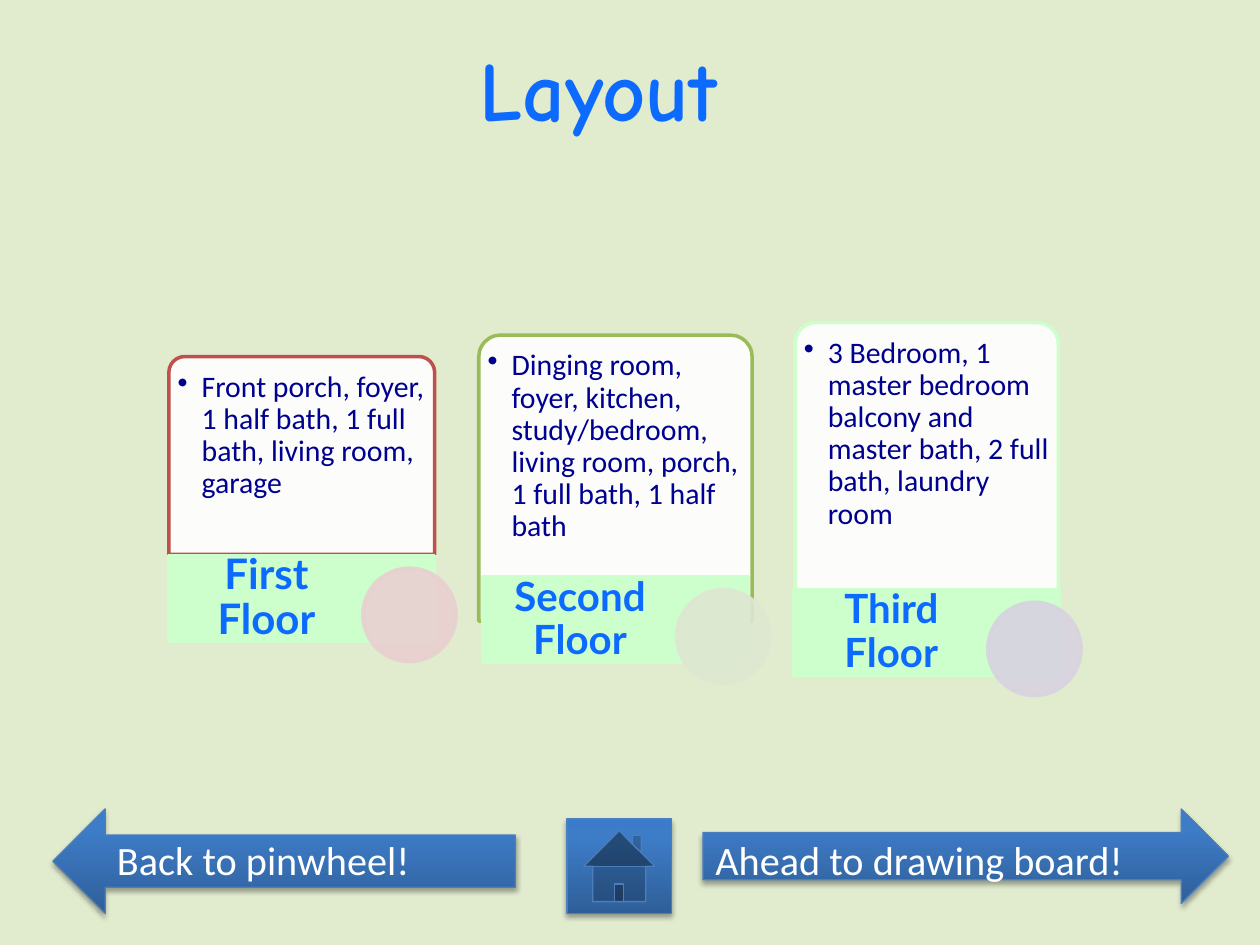
from copy import deepcopy

from pptx import Presentation
from pptx.dml.color import RGBColor
from pptx.enum import shapes, text
from pptx.oxml import ns
from pptx.oxml.xmlchemy import OxmlElement
from pptx.util import Inches, Pt

BACKGROUND = RGBColor(0xE1, 0xEB, 0xCE)
BRIGHT_BLUE = RGBColor(0x0C, 0x6A, 0xFF)
NAVY = RGBColor(0x00, 0x00, 0x90)
WHITE = RGBColor(0xFF, 0xFF, 0xFF)
BLACK = RGBColor(0x00, 0x00, 0x00)
MINT = RGBColor(0xCC, 0xFF, 0xCC)
RED = RGBColor(0xC0, 0x50, 0x4D)
GREEN = RGBColor(0x9B, 0xBB, 0x59)
PALE_RED = RGBColor(0xE8, 0xD0, 0xD0)
PALE_GREEN = RGBColor(0xDE, 0xE7, 0xD1)
PALE_PURPLE = RGBColor(0xD8, 0xD3, 0xE0)
BUTTON_LINE = RGBColor(0x4B, 0x7E, 0xBC)
BUTTON_STOPS = [
    (0, RGBColor(0x2F, 0x5F, 0x99)),
    (0.8, RGBColor(0x3D, 0x7C, 0xC7)),
    (1, RGBColor(0x3A, 0x7C, 0xCB)),
]

FLOORS = [
    ("First Floor", 24, "Front porch, foyer, 1 half bath, 1 full bath, living room, garage",
     (1.34, 2.83, 2.11, 1.57), (1.34, 4.41), RED, PALE_RED),
    ("Second Floor", 23,
     "Dinging room, foyer, kitchen, study/bedroom, living room, porch, 1 full bath, 1 half bath",
     (3.8, 2.66, 2.17, 2.27), (3.83, 4.58), GREEN, PALE_GREEN),
    ("Third Floor", 23,
     "3 Bedroom, 1 master bedroom balcony and master bath, 2 full bath, laundry room",
     (6.31, 2.56, 2.09, 2.65), (6.3, 4.68), MINT, PALE_PURPLE),
]


def add_child(parent, tag, **attributes):
    """Append an XML element with the given attributes."""
    child = OxmlElement(tag)
    for name, value in attributes.items():
        child.set(name, str(value))
    parent.append(child)
    return child


def set_alpha(fill, percent):
    """Make a solid fill partly transparent."""
    color = fill._xPr.find(ns.qn("a:solidFill"))[0]
    add_child(color, "a:alpha", val=percent * 1000)


def add_shape(slide, kind, box, line_color, line_width):
    """Add an outlined preset shape without a shadow."""
    shape = slide.shapes.add_shape(kind, *map(Inches, box))
    shape.shadow.inherit = False
    shape.line.color.rgb = line_color
    shape.line.width = Pt(line_width)
    return shape


def add_panel(slide, kind, box, fill_color, line_color, alpha=100):
    """Add a solid shape of a floor card."""
    shape = add_shape(slide, kind, box, line_color, 2)
    shape.fill.solid()
    shape.fill.fore_color.rgb = fill_color
    if alpha < 100:
        set_alpha(shape.fill, alpha)
    return shape


def add_text(slide, box, words, font, size, color, bold=False, align=text.PP_ALIGN.LEFT,
             margins=(0.1, 0.05, 0.1, 0.05)):
    """Add a wrapped one-paragraph text box."""
    frame = slide.shapes.add_textbox(*map(Inches, box)).text_frame
    frame.word_wrap = True
    (frame.margin_left, frame.margin_top,
     frame.margin_right, frame.margin_bottom) = map(Inches, margins)
    paragraph = frame.paragraphs[0]
    paragraph.text = words
    paragraph.alignment = align
    paragraph.font.name = font
    paragraph.font.size = Pt(size)
    paragraph.font.bold = bold
    paragraph.font.color.rgb = color
    return frame


def add_bullet(paragraph):
    """Give a paragraph a hanging round bullet."""
    properties = paragraph._p.get_or_add_pPr()
    properties.set("marL", str(Inches(0.19)))
    properties.set("indent", str(-Inches(0.19)))
    add_child(properties, "a:buChar", char="•")


def add_floor(slide, name, name_size, rooms, card, label, outline, accent):
    """Add a floor card with its rooms, name label and circle."""
    left, top, width, height = card
    panel = add_panel(slide, shapes.MSO_SHAPE.ROUND_2_SAME_RECTANGLE, card, WHITE, outline, 90)
    panel.adjustments[0] = 0.08
    frame = add_text(slide, (left + 0.05, top + 0.05, width - 0.1, height - 0.05), rooms,
                     "Calibri", 17, NAVY, margins=(0.02, 0.07, 0.02, 0.02))
    frame.paragraphs[0].line_spacing = 0.9
    add_bullet(frame.paragraphs[0])

    left, top = label
    add_panel(slide, shapes.MSO_SHAPE.RECTANGLE, (left, top, 2.11, 0.68), MINT, MINT)
    frame = add_text(slide, (left, top, 1.48, 0.68), name, "Lato", name_size, BRIGHT_BLUE,
                     True, text.PP_ALIGN.CENTER, (0.1, 0, 0.03, 0))
    frame.vertical_anchor = text.MSO_ANCHOR.MIDDLE
    frame.paragraphs[0].line_spacing = 0.9
    circle = add_panel(slide, shapes.MSO_SHAPE.OVAL, (left + 1.54, top + 0.1, 0.74, 0.74),
                       accent, accent, 90)
    set_alpha(circle.line.fill, 90)


def add_button(slide, kind, box):
    """Add a blue gradient button with a soft shadow."""
    button = add_shape(slide, kind, box, BUTTON_LINE, 0.75)
    button.fill.gradient()
    button.fill.gradient_angle = 90
    properties = button._element.spPr
    stop_list = properties.find(ns.qn("a:gradFill")).find(ns.qn("a:gsLst"))
    stop_list.append(deepcopy(stop_list[-1]))
    for stop, (position, color) in zip(button.fill.gradient_stops, BUTTON_STOPS):
        stop.position = position
        stop.color.rgb = color
    shadow = add_child(properties.find(ns.qn("a:effectLst")), "a:outerShdw", blurRad=Pt(3.1),
                       dist=Pt(1.8), dir=5400000, rotWithShape=0)
    color = add_child(shadow, "a:srgbClr", val=BLACK)
    add_child(color, "a:alpha", val=35000)


def main():
    """Build the floor layout slide."""
    presentation = Presentation()
    presentation.slide_width, presentation.slide_height = Inches(10), Inches(7.5)
    slide = presentation.slides.add_slide(presentation.slide_layouts[6])
    slide.background.fill.solid()
    slide.background.fill.fore_color.rgb = BACKGROUND

    title = add_text(slide, (2.75, 0.25, 4, 0.91), "Layout", "Comic Neue", 48, BRIGHT_BLUE,
                     True, text.PP_ALIGN.CENTER)
    title.auto_size = text.MSO_AUTO_SIZE.SHAPE_TO_FIT_TEXT
    for floor in FLOORS:
        add_floor(slide, *floor)

    add_button(slide, shapes.MSO_SHAPE.ACTION_BUTTON_HOME, (4.5, 6.5, 0.83, 0.75))
    for kind, box, words, text_left, text_width in [
        (shapes.MSO_SHAPE.RIGHT_ARROW, (5.58, 6.42, 4.17, 0.75),
         "Ahead to drawing board!", 5.58, 4.83),
        (shapes.MSO_SHAPE.LEFT_ARROW, (0.42, 6.42, 3.67, 0.83),
         "Back to pinwheel!", 0.83, 3.42),
    ]:
        add_button(slide, kind, box)
        frame = add_text(slide, (text_left, 6.58, text_width, 0.49), words, "Calibri", 23, WHITE)
        frame.auto_size = text.MSO_AUTO_SIZE.SHAPE_TO_FIT_TEXT

    presentation.save("out.pptx")


if __name__ == "__main__":
    main()
